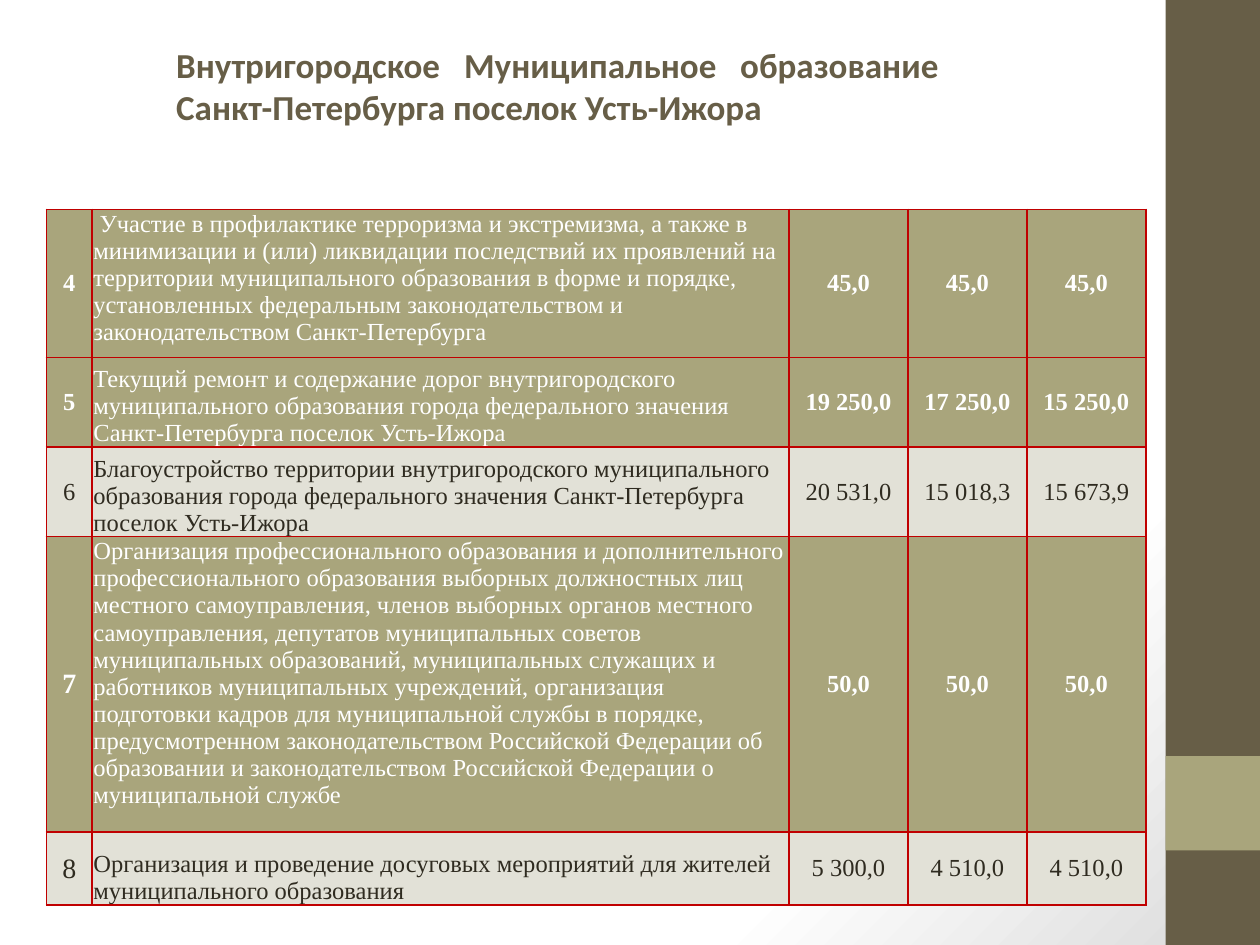
from lxml.etree import SubElement as Sub
from pptx import Presentation
from pptx.dml.color import RGBColor as Rgb
from pptx.enum.shapes import MSO_SHAPE as Shape
from pptx.enum.text import MSO_ANCHOR as Anchor, PP_ALIGN as Align
from pptx.oxml.ns import qn
from pptx.util import Pt

BROWN = Rgb(0x67, 0x5E, 0x47)
OLIVE = Rgb(0xA9, 0xA5, 0x7C)
PALE = Rgb(0xE2, 0xE1, 0xD7)
INK = Rgb(0x2F, 0x2B, 0x20)
WHITE = Rgb(0xFF, 0xFF, 0xFF)
GRAY = Rgb(0xDA, 0xDA, 0xDA)
RED = Rgb(0xC0, 0x00, 0x00)

SERIF = "Times New Roman"
COLS = (26.2, 398.2, 68, 68, 68)
LEFT, WIDE = 26.5, sum(COLS)
TIGHT = dict(margin_left=Pt(0.7), margin_right=Pt(0.7),
             margin_top=Pt(0.7), margin_bottom=0)

TOWN = "муниципального образования города федерального значения Санкт-Петербурга поселок Усть-Ижора"

TABLES = [
    (306.7, [
        (155.4, 16, True, Anchor.TOP, (
            "7",
            "Организация профессионального образования и дополнительного профессионального "
            "образования выборных должностных лиц местного самоуправления, членов выборных "
            "органов местного самоуправления, депутатов муниципальных советов муниципальных "
            "образований, муниципальных служащих и работников муниципальных учреждений, "
            "организация подготовки кадров для муниципальной службы в порядке, предусмотренном "
            "законодательством Российской Федерации об образовании и законодательством "
            "Российской Федерации о муниципальной службе",
            "50,0", "50,0", "50,0")),
        (41.7, 16, False, Anchor.BOTTOM, (
            "8",
            "Организация и проведение досуговых мероприятий для жителей муниципального образования",
            "5 300,0", "4 510,0", "4 510,0")),
    ]),
    (204.4, [
        (47, 14, True, Anchor.BOTTOM, (
            "5", "Текущий ремонт и содержание дорог внутригородского " + TOWN,
            "19 250,0", "17 250,0", "15 250,0")),
        (47, 14, False, Anchor.BOTTOM, (
            "6", "Благоустройство территории внутригородского " + TOWN,
            "20 531,0", "15 018,3", "15 673,9")),
    ]),
    (119.6, [
        (84.7, 14, True, Anchor.TOP, (
            "4",
            " Участие в профилактике терроризма и экстремизма, а также в минимизации и (или) "
            "ликвидации последствий их проявлений на территории муниципального образования в "
            "форме и порядке, установленных федеральным законодательством и законодательством "
            "Санкт-Петербурга",
            "45,0", "45,0", "45,0")),
    ]),
]


def put(obj, **vals):
    """Set each named attribute on an object."""
    for key, val in vals.items():
        setattr(obj, key, val)


def style(font, hue, **vals):
    """Format a font and give it a colour."""
    put(font, **vals)
    font.color.rgb = hue


def edge(cell):
    """Draw a red line on the four sides of a cell."""
    prop = cell._tc.get_or_add_tcPr()
    for side in "LRTB":
        line = Sub(prop, qn("a:ln" + side), w=str(Pt(1)))
        Sub(Sub(line, qn("a:solidFill")), qn("a:srgbClr"), val=str(RED))


def block(slide, x, y, w, h, hue):
    """Add a plain filled rectangle."""
    box = slide.shapes.add_shape(Shape.RECTANGLE, Pt(x), Pt(y), Pt(w), Pt(h))
    box.shadow.inherit = False
    box.fill.solid()
    box.fill.fore_color.rgb = hue
    box.line.fill.background()


def decor(slide, x, y, w, h):
    """Paint the page gradient and the band at the side."""
    fill = slide.background.fill
    fill.gradient()
    fill.gradient_angle = 315
    for stop, pos, hue in zip(fill.gradient_stops, (0.75, 1), (WHITE, GRAY)):
        stop.position = pos
        stop.color.rgb = hue
    block(slide, x, y, w, h, BROWN)
    block(slide, x, y + 0.8 * h, w, w, OLIVE)


def title(slide, x, y, w, h):
    """Add the heading, its first line spread on tab stops."""
    frame = slide.shapes.add_textbox(Pt(x), Pt(y), Pt(w), Pt(h)).text_frame
    frame.word_wrap = True
    par = frame.paragraphs[0]
    tabs = Sub(par._p.get_or_add_pPr(), qn("a:tabLst"))
    for pos in (164.5, 322.3):
        Sub(tabs, qn("a:tab"), pos=str(Pt(pos)), algn="l")
    par.text = "Внутригородское\tМуниципальное\tобразование\vСанкт-Петербурга поселок Усть-Ижора"
    style(par.font, BROWN, name="Calibri", size=Pt(20), bold=True)


def grid(slide, x, y, w, rows):
    """Add a table of numbered items with three sums each."""
    high = sum(row[0] for row in rows)
    table = slide.shapes.add_table(len(rows), len(COLS), Pt(x), Pt(y), Pt(w), Pt(high)).table
    for col, wide in zip(table.columns, COLS):
        col.width = Pt(wide)
    for line, (tall, size, strong, anchor, texts) in zip(table.rows, rows):
        line.height = Pt(tall)
        for num, (cell, text) in enumerate(zip(line.cells, texts)):
            edge(cell)
            cell.fill.solid()
            cell.fill.fore_color.rgb = OLIVE if strong else PALE
            name = num == 1
            put(cell, text=text, vertical_anchor=anchor if name else Anchor.MIDDLE)
            if name:
                put(cell, **TIGHT)
            par = cell.text_frame.paragraphs[0]
            par.alignment = Align.LEFT if name else Align.CENTER
            style(par.runs[0].font, WHITE if strong else INK, name=SERIF,
                  size=Pt(14 if num else size), bold=strong and not name)


def main():
    """Build the slide and save it."""
    deck = Presentation()
    put(deck, slide_width=Pt(720), slide_height=Pt(540))
    slide = deck.slides.add_slide(deck.slide_layouts[6])
    decor(slide, 666, 0, 54, 540)
    title(slide, 93.6, 21.6, 504.7, 55.4)
    for top, rows in TABLES:
        grid(slide, LEFT, top, WIDE, rows)
    deck.save("out.pptx")


if __name__ == "__main__":
    main()
